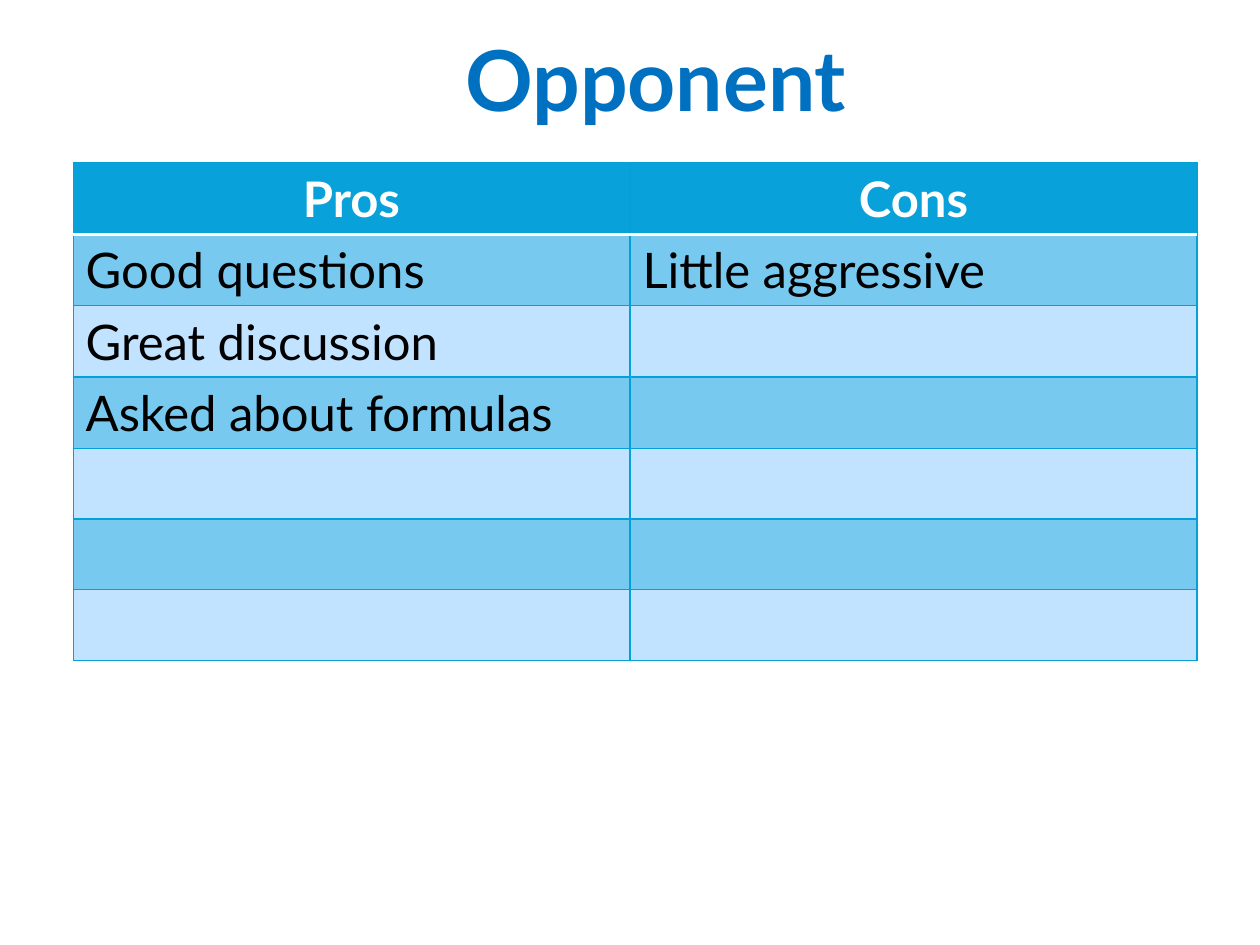
from lxml.etree import SubElement
from pptx import Presentation
from pptx.dml.color import RGBColor
from pptx.enum.text import MSO_ANCHOR, MSO_AUTO_SIZE, PP_ALIGN
from pptx.oxml.ns import qn
from pptx.util import Inches, Pt

COLORS = {
    "title": "0070C0",
    "header": "08A1D9",
    "dark_band": "78C9F0",
    "light_band": "C1E3FF",
    "grid": "03A0D9",
    "white": "FFFFFF",
    "black": "000000",
}


def format_text(paragraph, align, size, color, bold):
    paragraph.alignment = align
    values = {"name": "Lato", "size": Pt(size), "bold": bold}
    for run in paragraph.runs:
        for attribute, value in values.items():
            setattr(run.font, attribute, value)
        run.font.color.rgb = RGBColor.from_string(COLORS[color])


def add_border(cell, side, color, width):
    line = SubElement(cell._tc.get_or_add_tcPr(), qn(f"a:ln{side}"), w=str(Pt(width)))
    fill = SubElement(line, qn("a:solidFill"))
    SubElement(fill, qn("a:srgbClr"), val=COLORS[color])


prs = Presentation()
prs.slide_width, prs.slide_height = Inches(10), Inches(7.5)
slide = prs.slides.add_slide(prs.slide_layouts[5])

# Title
title = slide.shapes.title
title.left, title.top = Inches(1.58), Inches(0.17)
title.width, title.height = Inches(7.25), Inches(1.72)
title.text_frame.text = "Opponent"
title.text_frame.vertical_anchor = MSO_ANCHOR.TOP
title.text_frame.auto_size = MSO_AUTO_SIZE.NONE
format_text(title.text_frame.paragraphs[0], PP_ALIGN.CENTER, 48, "title", True)

# Pros and cons table
assessment = [
    ("Pros", "Cons"),
    ("Good questions", "Little aggressive"),
    ("Great discussion", ""),
    ("Asked about formulas", ""),
    ("", ""),
    ("", ""),
    ("", ""),
]
column_widths = [4.42, 4.5]
row_height = 0.56
table = slide.shapes.add_table(
    len(assessment), len(column_widths), Inches(0.58), Inches(1.29),
    Inches(sum(column_widths)), Inches(row_height * len(assessment)),
).table
for column, width in zip(table.columns, column_widths):
    column.width = Inches(width)

for row_index, remarks in enumerate(assessment):
    table.rows[row_index].height = Inches(row_height)
    is_header = row_index == 0
    band = "header" if is_header else "dark_band" if row_index % 2 else "light_band"
    for column_index, remark in enumerate(remarks):
        cell = table.cell(row_index, column_index)

        # A white rule separates the header from the body
        borders = {side: ("grid", 0.75) for side in "LRTB"}
        if row_index < 2:
            borders["B" if is_header else "T"] = ("white", 2)
        for side, (color, width) in borders.items():
            add_border(cell, side, color, width)

        cell.fill.solid()
        cell.fill.fore_color.rgb = RGBColor.from_string(COLORS[band])
        if remark:
            cell.text = remark
            format_text(
                cell.text_frame.paragraphs[0],
                PP_ALIGN.CENTER if is_header else PP_ALIGN.LEFT,
                28, "white" if is_header else "black", is_header,
            )

prs.save("out.pptx")
